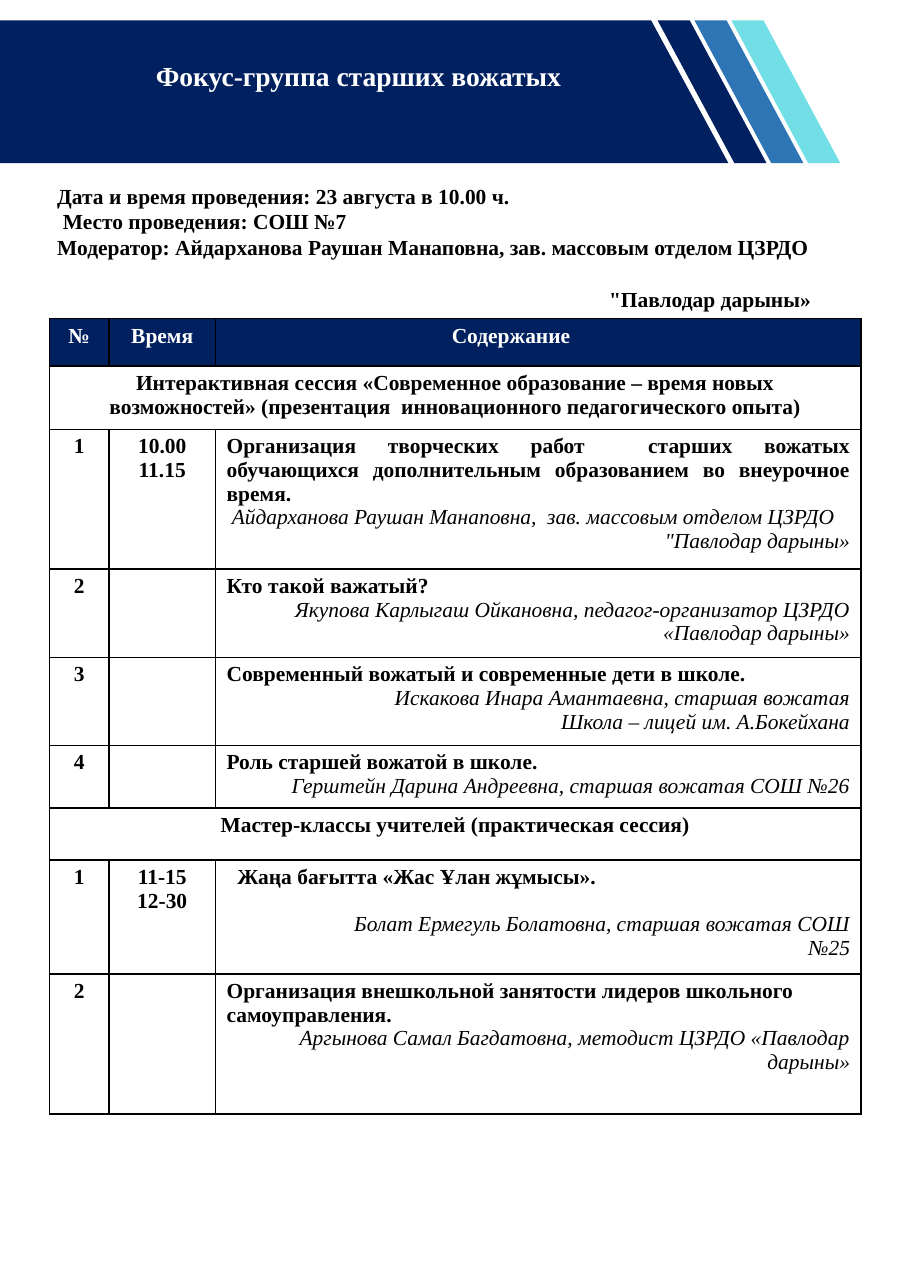
"""Builds the one-page programme of the focus group of senior counsellors."""
from lxml import etree
from pptx import Presentation
from pptx.dml.color import RGBColor
from pptx.enum.shapes import MSO_SHAPE
from pptx.enum.text import PP_ALIGN
from pptx.oxml.ns import qn
from pptx.util import Cm, Pt

LEFT, CENTER, RIGHT, JUSTIFY = PP_ALIGN.LEFT, PP_ALIGN.CENTER, PP_ALIGN.RIGHT, PP_ALIGN.JUSTIFY
PARALLELOGRAM = MSO_SHAPE.PARALLELOGRAM
FONT = "Times New Roman"
NAVY, BLUE, AQUA, WHITE, BLACK = "002060", "2E75B6", "71DFE5", "FFFFFF", "000000"

TITLE = "Фокус-группа старших вожатых"
INTRO = [
    ("Дата и время проведения: 23 августа в 10.00 ч.", {}),
    ("Место проведения: СОШ №7", {"indent": 0.13}),
    ("Модератор: Айдарханова Раушан Манаповна, зав. массовым отделом ЦЗРДО", {}),
    ("\"Павлодар дарыны»", {"indent": 12.72, "before": 16.9}),
]

LABEL = {"align": CENTER}
HEADING = {"align": CENTER, "color": WHITE}
TOPIC = {"align": JUSTIFY}
SPEAKER = {"align": RIGHT, "italic": True}

COLUMN_WIDTHS = [1.37, 2.46, 14.88]
PROGRAMME = [
    (1.09, [[("№", HEADING)], [("Время", HEADING)],
            [("Содержание", {"color": WHITE, "indent": 5.19})]]),
    (1.46, [[("Интерактивная сессия «Современное образование – время новых возможностей» "
              "(презентация  инновационного педагогического опыта)", LABEL)]]),
    (3.2, [[("1", LABEL)], [("10.00", LABEL), ("11.15", LABEL)],
           [("Организация творческих работ  старших вожатых обучающихся дополнительным "
             "образованием во внеурочное время.", TOPIC),
            ("Айдарханова Раушан Манаповна,  зав. массовым отделом ЦЗРДО",
             {"italic": True, "indent": 0.12}),
            ("\"Павлодар дарыны»", SPEAKER)]]),
    (2.03, [[("2", LABEL)], [],
            [("Кто такой важатый?", TOPIC),
             ("Якупова Карлыгаш Ойкановна, педагог-организатор ЦЗРДО", SPEAKER),
             ("«Павлодар дарыны»", SPEAKER)]]),
    (2.03, [[("3", LABEL)], [],
            [("Современный вожатый и современные дети в школе.", {}),
             ("Искакова Инара Амантаевна, старшая вожатая", SPEAKER),
             ("Школа – лицей им. А.Бокейхана", SPEAKER)]]),
    (1.43, [[("4", LABEL)], [],
            [("Роль старшей вожатой в школе.", TOPIC),
             ("Герштейн Дарина Андреевна, старшая вожатая СОШ №26", SPEAKER)]]),
    (1.2, [[("Мастер-классы учителей (практическая сессия)", LABEL)]]),
    (2.63, [[("1", LABEL)], [("11-15", LABEL), ("12-30", LABEL)],
            [("Жаңа бағытта «Жас Ұлан жұмысы».", {"align": JUSTIFY, "indent": 0.25}),
             ("Болат Ермегуль Болатовна, старшая вожатая СОШ №25",
              {"align": RIGHT, "italic": True, "indent": 2.5, "before": 15.5})]]),
    (3.23, [[("2", LABEL)], [],
            [("Организация внешкольной занятости лидеров школьного самоуправления.", {}),
             ("Аргынова Самал Багдатовна, методист ЦЗРДО «Павлодар дарыны»", SPEAKER)]]),
]

BAND_TOP, BAND_HEIGHT = 0.47, 3.29
BAND_TOP_RIGHT, BAND_BOTTOM_RIGHT = 15.01, 16.79
STRIPES = [NAVY, BLUE, AQUA]
STRIPE_LEFT, STRIPE_WIDTH, STRIPE_STEP = 15.16, 2.51, 0.85


def paint(fill, color):
    fill.solid()
    fill.fore_color.rgb = RGBColor.from_string(color)


def finish(shape, color):
    paint(shape.fill, color)
    shape.line.fill.background()
    shape.shadow.inherit = False


def write(frame, lines, size=14):
    frame.word_wrap = True
    for number, (text, style) in enumerate(lines):
        paragraph = frame.add_paragraph() if number else frame.paragraphs[0]
        paragraph.alignment = style.get("align", LEFT)
        if "before" in style:
            paragraph.space_before = Pt(style["before"])
        if "indent" in style:
            properties = paragraph._p.get_or_add_pPr()
            properties.set("marL", str(Cm(style["indent"])))
            properties.set("indent", "0")
        run = paragraph.add_run()
        run.text = text
        run.font.name = FONT
        run.font.size = Pt(size)
        run.font.italic = style.get("italic", False)
        run.font.bold = not run.font.italic
        paint(run.font.fill, style.get("color", BLACK))


def outline(cell):
    properties = cell._tc.get_or_add_tcPr()
    for side in ("a:lnL", "a:lnR", "a:lnT", "a:lnB"):
        border = etree.SubElement(properties, qn(side), w=str(Pt(1)))
        solid = etree.SubElement(border, qn("a:solidFill"))
        etree.SubElement(solid, qn("a:srgbClr"), val=BLACK)


def add_banner(shapes):
    bottom = BAND_TOP + BAND_HEIGHT
    builder = shapes.build_freeform(Cm(0), Cm(BAND_TOP))
    corners = [(BAND_TOP_RIGHT, BAND_TOP), (BAND_BOTTOM_RIGHT, bottom), (0, bottom)]
    builder.add_line_segments([(Cm(x), Cm(y)) for x, y in corners])
    finish(builder.convert_to_shape(), NAVY)
    for number, color in enumerate(STRIPES):
        stripe = shapes.add_shape(PARALLELOGRAM, Cm(STRIPE_LEFT + number * STRIPE_STEP),
                                  Cm(BAND_TOP), Cm(STRIPE_WIDTH), Cm(BAND_HEIGHT))
        stripe.adjustments[0] = 0.705
        stripe.rotation = 180
        stripe.element.spPr.xfrm.set("flipH", "1")
        finish(stripe, color)
    title = shapes.add_textbox(Cm(0.48), Cm(1.24), Cm(15.57), Cm(1.02))
    write(title.text_frame, [(TITLE, HEADING)], size=18)


def add_programme(shapes):
    heights = [height for height, _ in PROGRAMME]
    programme = shapes.add_table(len(PROGRAMME), len(COLUMN_WIDTHS), Cm(1.14), Cm(7.35),
                                 Cm(sum(COLUMN_WIDTHS)), Cm(sum(heights))).table
    programme.first_row = programme.horz_banding = False
    for column, width in zip(programme.columns, COLUMN_WIDTHS):
        column.width = Cm(width)
    for number, (height, entries) in enumerate(PROGRAMME):
        row = programme.rows[number]
        row.height = Cm(height)
        for cell in row.cells:
            outline(cell)
            if number == 0:
                paint(cell.fill, NAVY)
            else:
                cell.fill.background()
        if len(entries) == 1:
            row.cells[0].merge(row.cells[len(COLUMN_WIDTHS) - 1])
        for cell, lines in zip(row.cells, entries):
            write(cell.text_frame, lines)


def main():
    deck = Presentation()
    deck.slide_width, deck.slide_height = Cm(21), Cm(29.7)
    shapes = deck.slides.add_slide(deck.slide_layouts[6]).shapes
    add_banner(shapes)
    add_programme(shapes)
    intro = shapes.add_textbox(Cm(1.07), Cm(4.09), Cm(18.77), Cm(3.25))
    write(intro.text_frame, INTRO)
    deck.save("out.pptx")


if __name__ == "__main__":
    main()
